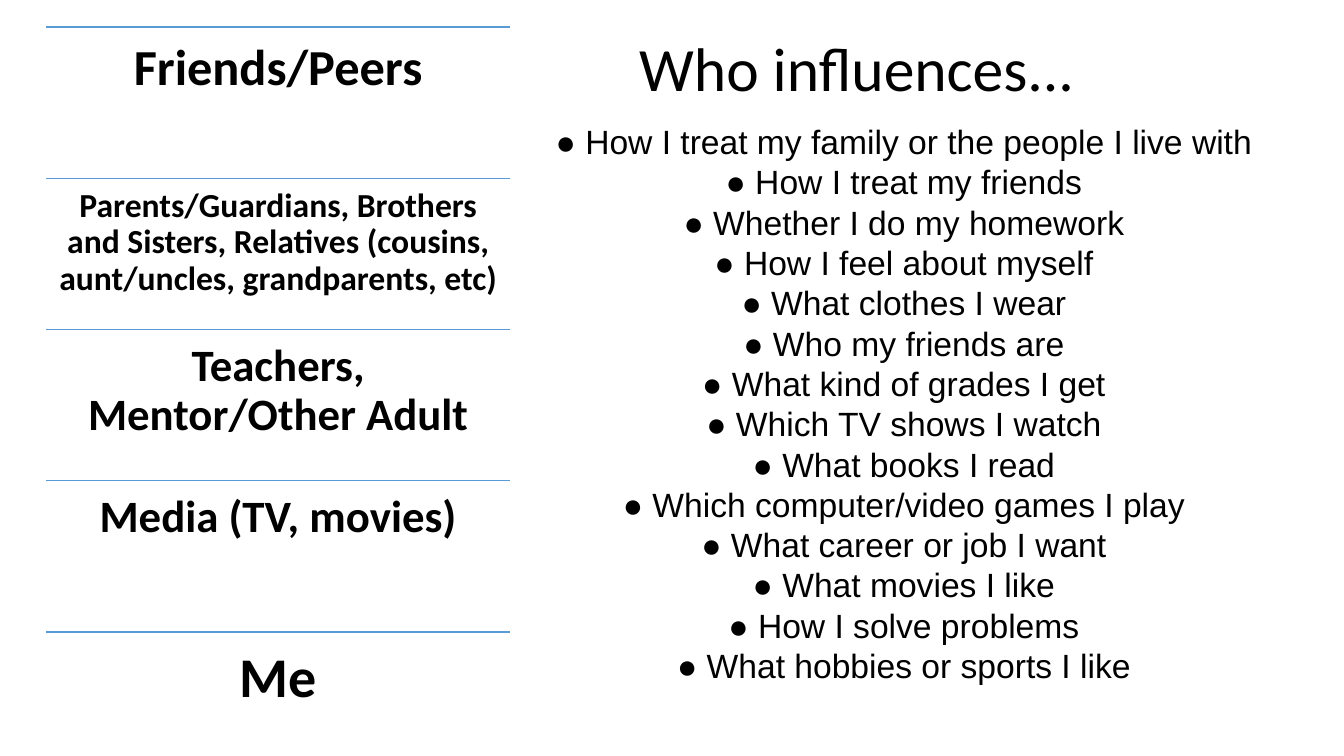
"""Builds a slide pairing the people who influence me with what they influence."""
from lxml import etree
from pptx import Presentation
from pptx.dml.color import RGBColor
from pptx.enum.shapes import MSO_CONNECTOR as Connector
from pptx.enum.text import MSO_ANCHOR as Anchor, MSO_AUTO_SIZE as AutoSize, PP_ALIGN as Align
from pptx.oxml.ns import qn
from pptx.util import Inches, Pt


def rgb(value):
    return RGBColor.from_string(value)


def add_text(left, top, width, height, lines, size, font, bold=False, spacing=1.0):
    frame = slide.shapes.add_textbox(
        Inches(left), Inches(top), Inches(width), Inches(height)).text_frame
    frame.word_wrap = True
    frame.text = "\n".join(lines)
    for paragraph in frame.paragraphs:
        paragraph.alignment = Align.CENTER
        paragraph.line_spacing = spacing
        for run in paragraph.runs:
            run.font.size = Pt(size)
            run.font.name = font
            run.font.bold = bold
            run.font.color.rgb = rgb("000000")
    return frame


deck = Presentation()
deck.slide_width = Inches(13.33)
deck.slide_height = Inches(7.5)
slide = deck.slides.add_slide(deck.slide_layouts[6])

title = add_text(5.05, -0.02, 6.9, 1.45, ["Who influences..."], 44, "Calibri", spacing=0.9)
title.vertical_anchor = Anchor.MIDDLE

influencers = [
    ("Friends/Peers", 36),
    ("Parents/Guardians, Brothers and Sisters, Relatives "
     "(cousins, aunt/uncles, grandparents, etc)", 24),
    ("Teachers, Mentor/Other Adult", 32),
    ("Media (TV, movies)", 32),
    ("Me", 40),
]
row_left, first_top, row_width, row_height = 0.46, 0.27, 4.6, 1.5

for index, (influencer, size) in enumerate(influencers):
    top = first_top + index * row_height
    divider = slide.shapes.add_connector(
        Connector.STRAIGHT, Inches(row_left), Inches(top),
        Inches(row_left + row_width), Inches(top))
    divider.line.color.rgb = rgb("5B9BD5")
    divider.line.width = Pt(1)
    etree.SubElement(divider._element.spPr, qn("a:effectLst"))

    row = add_text(row_left, top, row_width, row_height, [influencer], size,
                   "Calibri", bold=True, spacing=0.9)
    inset = Inches(size / 240)
    row.margin_left = row.margin_right = row.margin_top = row.margin_bottom = inset

influenced = [
    "How I treat my family or the people I live with",
    "How I treat my friends",
    "Whether I do my homework",
    "How I feel about myself",
    "What clothes I wear",
    "Who my friends are",
    "What kind of grades I get",
    "Which TV shows I watch",
    "What books I read",
    "Which computer/video games I play",
    "What career or job I want",
    "What movies I like",
    "How I solve problems",
    "What hobbies or sports I like",
]
choices = add_text(5.05, 1.15, 7.83, 5.76, [f"● {choice}" for choice in influenced], 24, "Arial")
choices.auto_size = AutoSize.SHAPE_TO_FIT_TEXT

deck.save("out.pptx")
